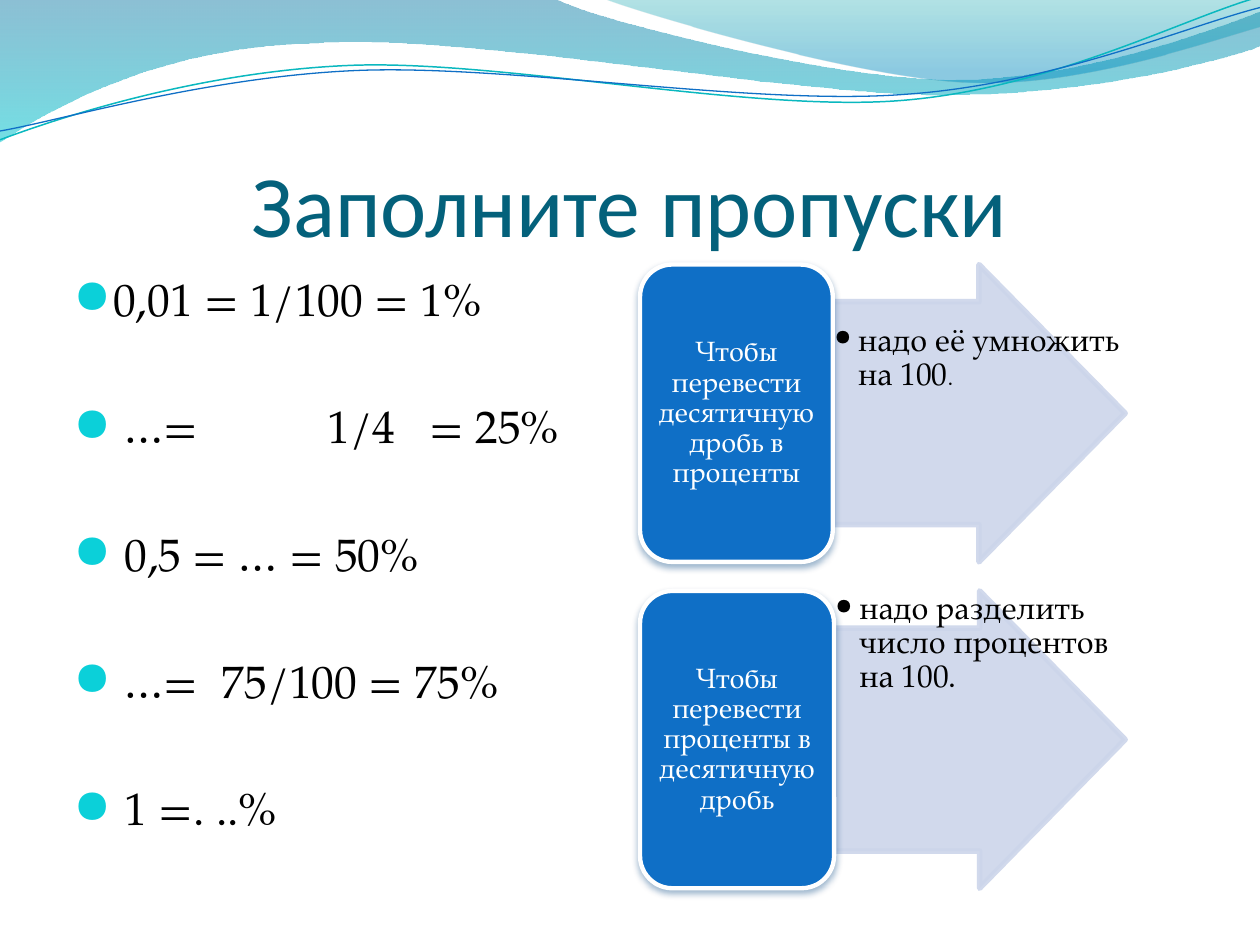
from lxml import etree
from pptx import Presentation, util as u
from pptx.dml.color import RGBColor
from pptx.enum import shapes, text
from pptx.oxml.ns import qn

# Content
TITLE = "Заполните пропуски"
EXERCISES = [  # line, tab stops in inches
    ("0,01 = 1/100 = 1%", ()),
    (" …=\t1/4\t= 25%", (2, 2.81)),
    (" 0,5 = … = 50%", ()),
    (" …=\t75/100 = 75%", (1.16,)),
    (" 1 =. ..%", ()),
]
RULES = [  # question, answer runs (text, size), card width, space above answer
    ("Чтобы перевести десятичную дробь в проценты",
     [("надо её умножить на 100", 18), (".", 13)], 1.53, 0.46),
    ("Чтобы перевести проценты в десятичную дробь",
     [("надо разделить число процентов на 100.", 18)], 1.54, 0),
]

THEME = {
    "heading_font": "Calibri", "body_font": "TeX Gyre Pagella",
    "title": "04617B", "ink": "000000", "white": "FFFFFF",
    "bullet": "0BD0D9", "card": "0F6FC6", "arrow": "CCD5EA", "shadow": "00427E",
    "title_size": 50, "exercise_size": 26, "question_size": 16,
}

# Wave outlines: start point, then segments of one (line) or three (curve) points
WAVE_BANDS = [  # start, segments, gradient stops (position, colour, opacity)
    ((0, 0), [[(4.4, -0.01)],
              [(4.76, 0.17), (6.64, 0.63), (7.58, 0.63)],
              [(8.53, 0.63), (9.58, 0.26), (10, 0.09)],
              [(10.01, 0.36)],
              [(9.83, 0.44), (8.7, 0.76), (7.46, 0.75)],
              [(6.22, 0.75), (3.82, 0.28), (2.57, 0.34)],
              [(1.29, 0.36), (0.46, 0.83), (-0.01, 1.13)]],
     [(0, "0074A1", 45), (1, "00C6CF", 55)]),
    ((4.79, -0.01), [[(5.09, 0.11), (6.82, 0.62), (7.69, 0.65)],
                     [(8.56, 0.69), (9.61, 0.32), (10, 0.21)],
                     [(10, 0)]],
     [(0, "00A1A9", 30), (0.8, "008BBF", 45)]),
]
WAVE_LINES = [  # start, segments, colour, width
    ((0, 1.11), [[(0.48, 0.93), (1.58, 0.57), (2.77, 0.52)],
                 [(3.95, 0.47), (5.93, 0.89), (7.13, 0.8)],
                 [(8.33, 0.71), (9.38, 0.15), (9.98, -0.02)]], "0AB8BF", 0.85),
    ((0, 1.04), [[(0.47, 0.96), (1.64, 0.61), (2.83, 0.56)],
                 [(4.03, 0.51), (5.97, 0.84), (7.17, 0.75)],
                 [(8.36, 0.67), (9.41, 0.21), (10, 0.06)]], "0F6FC6", 0.75),
]


def rgb(name):
    return RGBColor.from_string(THEME.get(name, name))


def add_xml(parent, tag, **attributes):
    return etree.SubElement(parent, qn(tag), {k: str(v) for k, v in attributes.items()})


def set_opacity(element, percent):
    for colour in element.iter(qn("a:srgbClr")):
        add_xml(colour, "a:alpha", val=percent * 1000)


def add_wave(slide, start, segments, closed):
    """Build the outline through all points, then bend the three-point segments."""
    points = [(round(x * 100), round(y * 100))
              for x, y in [start, *(point for segment in segments for point in segment)]]
    builder = slide.shapes.build_freeform(*points[0], scale=u.Inches(0.01))
    builder.add_line_segments(points[1:], close=closed)
    wave = builder.convert_to_shape()
    wave.shadow.inherit = False
    steps = iter(list(wave._element.iter(qn("a:lnTo"))))
    for segment in segments:
        first, *others = [next(steps) for _ in segment]
        if others:
            first.addprevious(curve := etree.Element(qn("a:cubicBezTo")))
            for step in (first, *others):
                curve.append(step[0])
                step.getparent().remove(step)
    return wave


def set_frame(frame, insets, anchor):
    frame.word_wrap = True
    frame.vertical_anchor = anchor
    (frame.margin_left, frame.margin_top,
     frame.margin_right, frame.margin_bottom) = map(u.Inches, insets)


def add_text_frame(slide, box, insets, anchor=text.MSO_ANCHOR.TOP):
    frame = slide.shapes.add_textbox(*map(u.Inches, box)).text_frame
    set_frame(frame, insets, anchor)
    return frame


def add_bullet(paragraph, indent, char, colour="ink", size=100, tabs=()):
    props = paragraph._p.get_or_add_pPr()
    props.set("marL", str(u.Inches(indent)))
    props.set("indent", str(-u.Inches(indent)))
    add_xml(add_xml(props, "a:buClr"), "a:srgbClr", val=THEME[colour])
    add_xml(props, "a:buSzPct", val=size * 1000)
    add_xml(props, "a:buFont", typeface=THEME["body_font"])
    add_xml(props, "a:buChar", char=char)
    if tabs:
        stops = add_xml(props, "a:tabLst")
        for stop in tabs:
            add_xml(stops, "a:tab", pos=u.Inches(stop), algn="l")


def set_font(font, size, colour, face="body_font"):
    font.name, font.size = THEME[face], u.Pt(size)
    font.color.rgb = rgb(colour)


def add_block(slide, kind, box, fill, line, width):
    block = slide.shapes.add_shape(kind, *map(u.Inches, box))
    block.shadow.inherit = False
    block.fill.solid()
    block.fill.fore_color.rgb = rgb(fill)
    block.line.color.rgb = rgb(line)
    block.line.width = u.Pt(width)
    return block


def add_rule(slide, top, question, answer, card_width, space_above):
    left, right, height = 5.08, 8.93, 2.36
    arrow_left = left + card_width
    arrow_box = (arrow_left, top, right - arrow_left, height)

    # Arrow with the answer over it
    arrow = add_block(slide, shapes.MSO_SHAPE.RIGHT_ARROW, arrow_box, "arrow", "arrow", 3.15)
    arrow.adjustments[0], arrow.adjustments[1] = 0.75, 0.5
    set_opacity(arrow._element.spPr, 90)
    frame = add_text_frame(slide, arrow_box, (0.01, 0.01 + space_above, 0.01, 0.01))
    reply = frame.paragraphs[0]
    add_bullet(reply, 0.19, "•")
    reply.line_spacing = 0.9
    for words, size in answer:
        run = reply.add_run()
        run.text = words
        set_font(run.font, size, "ink")

    # Card with the question
    card = add_block(slide, shapes.MSO_SHAPE.ROUNDED_RECTANGLE,
                     (left, top, card_width, height), "card", "white", 2.5)
    shadow = add_xml(card._element.spPr.find(qn("a:effectLst")), "a:outerShdw",
                     blurRad=u.Pt(4), dist=u.Pt(2), dir=90 * 60000, rotWithShape=0)
    add_xml(shadow, "a:srgbClr", val=THEME["shadow"])
    set_opacity(shadow, 38)
    set_frame(card.text_frame, (0, 0, 0, 0), text.MSO_ANCHOR.MIDDLE)
    prompt = card.text_frame.paragraphs[0]
    prompt.text = question
    prompt.alignment = text.PP_ALIGN.CENTER
    prompt.line_spacing = 0.9
    set_font(prompt.font, THEME["question_size"], "white")


def main():
    deck = Presentation()
    deck.slide_width, deck.slide_height = u.Inches(10), u.Inches(7.5)
    slide = deck.slides.add_slide(deck.slide_layouts[6])

    # Waves along the top
    for start, segments, stops in WAVE_BANDS:
        band = add_wave(slide, start, segments, True)
        band.line.fill.background()
        band.fill.gradient()
        band.fill.gradient_angle = 270
        for stop, (position, colour, opacity) in zip(band.fill.gradient_stops, stops):
            stop.position = position
            stop.color.rgb = rgb(colour)
            set_opacity(stop._gs, opacity)
    for start, segments, colour, width in WAVE_LINES:
        wave = add_wave(slide, start, segments, False)
        wave.fill.background()
        wave.line.color.rgb = rgb(colour)
        wave.line.width = u.Pt(width)

    # Title
    heading = add_text_frame(slide, (0.5, 0.77, 9, 1.25), (0, 0.05, 0, 0),
                             text.MSO_ANCHOR.BOTTOM).paragraphs[0]
    heading.text = TITLE
    heading.alignment = text.PP_ALIGN.CENTER
    set_font(heading.font, THEME["title_size"], "title", "heading_font")

    # Exercises
    frame = add_text_frame(slide, (0.5, 2.1, 4.42, 4.85), (0.1, 0.05, 0.1, 0.05))
    for index, (words, tabs) in enumerate(EXERCISES):
        exercise = frame.add_paragraph() if index else frame.paragraphs[0]
        exercise.text = words
        add_bullet(exercise, 0.3, "●", "bullet", 95, tabs)
        if index:
            exercise.space_before = u.Pt(41.6)
        set_font(exercise.font, THEME["exercise_size"], "ink")

    # Conversion rules
    for index, rule in enumerate(RULES):
        add_rule(slide, 2.1 + 2.59 * index, *rule)

    deck.save("out.pptx")


if __name__ == "__main__":
    main()
